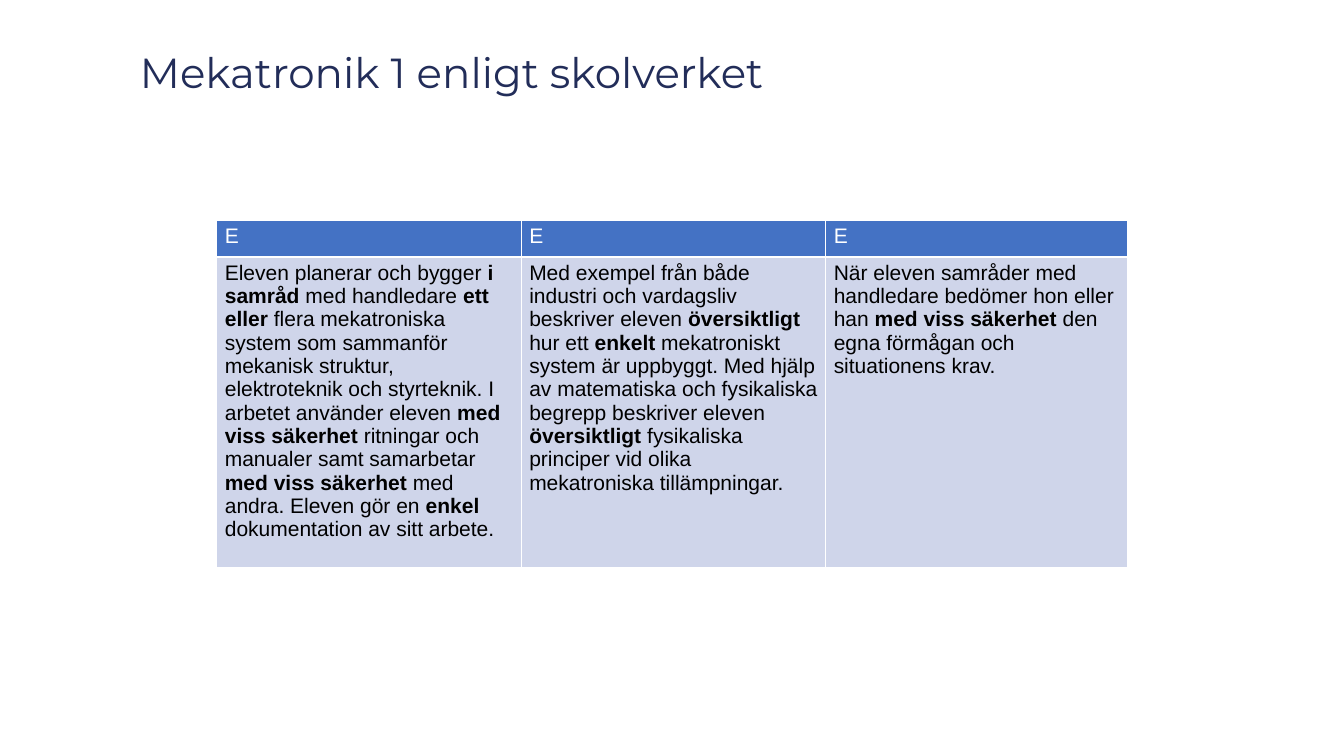
import pptx
import pptx.dml.color
import pptx.enum.text
import pptx.oxml
import pptx.oxml.ns
import pptx.util
from pptx.util import Inches

COLOURS = {
    "title": "222D59",
    "header": "4472C4",
    "body": "CFD5EA",
    "light": "FFFFFF",
    "dark": "000000",
}
COLUMN_WIDTHS = [3.02, 3.02, 2.99]
ROW_HEIGHTS = [0.36, 3.08]

# Each criterion alternates between plain and bold text, starting plain
CRITERIA = [
    ("E", [
        "Eleven planerar och bygger ", "i samråd", " med handledare ", "ett eller",
        " flera mekatroniska system som sammanför mekanisk struktur, elektroteknik "
        "och styrteknik. I arbetet använder eleven ", "med viss säkerhet",
        " ritningar och manualer samt samarbetar ", "med viss säkerhet ",
        "med andra. Eleven gör en ", "enkel ", "dokumentation av sitt arbete.",
    ]),
    ("E", [
        "Med exempel från både industri och vardagsliv beskriver eleven ",
        "översiktligt", " hur ett ", "enkelt ",
        "mekatroniskt system är uppbyggt. Med hjälp av matematiska och fysikaliska "
        "begrepp beskriver eleven ", "översiktligt ",
        "fysikaliska principer vid olika mekatroniska tillämpningar.",
    ]),
    ("E", [
        "När eleven samråder med handledare bedömer hon eller han ",
        "med viss säkerhet ", "den egna förmågan och situationens krav.",
    ]),
]


def colour(name):
    return pptx.dml.color.RGBColor.from_string(COLOURS[name])


def style_font(font, typeface, size, colour_name, bold=False):
    font.name = typeface
    font.size = pptx.util.Pt(size)
    font.bold = bold
    font.color.rgb = colour(colour_name)


def add_title(page, text):
    box = page.shapes.add_textbox(Inches(1.29), Inches(0.02), Inches(8.86), Inches(1.45))
    frame = box.text_frame
    frame.word_wrap = True
    frame.vertical_anchor = pptx.enum.text.MSO_ANCHOR.MIDDLE
    frame.text = text
    para = frame.paragraphs[0]
    para.line_spacing = 0.9
    style_font(para.runs[0].font, "Montserrat", 30, "title")


def add_borders(cell):
    properties = cell._tc.get_or_add_tcPr()
    for position, side in enumerate(("lnL", "lnR", "lnT", "lnB")):
        line = pptx.oxml.parse_xml(
            f'<a:{side} {pptx.oxml.ns.nsdecls("a")} w="{pptx.util.Pt(1)}"><a:solidFill>'
            f'<a:srgbClr val="{COLOURS["light"]}"/></a:solidFill></a:{side}>'
        )
        properties.insert(position, line)


def fill_cell(cell, pieces, fill_name, text_name):
    cell.margin_left = cell.margin_right = Inches(0.08)
    cell.margin_top = cell.margin_bottom = Inches(0.04)
    cell.fill.solid()
    cell.fill.fore_color.rgb = colour(fill_name)
    add_borders(cell)
    para = cell.text_frame.paragraphs[0]
    for index, piece in enumerate(pieces):
        span = para.add_run()
        span.text = piece
        style_font(span.font, "Arial", 15, text_name, bold=index % 2 == 1)


def add_criteria_table(page):
    frame = page.shapes.add_table(
        len(ROW_HEIGHTS), len(COLUMN_WIDTHS), Inches(2.15), Inches(2.19),
        Inches(sum(COLUMN_WIDTHS)), Inches(sum(ROW_HEIGHTS)),
    )
    table = frame.table
    for column, width in zip(table.columns, COLUMN_WIDTHS):
        column.width = Inches(width)
    for row, height in zip(table.rows, ROW_HEIGHTS):
        row.height = Inches(height)
    for index, (grade, pieces) in enumerate(CRITERIA):
        fill_cell(table.cell(0, index), [grade], "header", "light")
        fill_cell(table.cell(1, index), pieces, "body", "dark")


def main():
    deck = pptx.Presentation()
    deck.slide_width = Inches(13.33)
    deck.slide_height = Inches(7.5)
    page = deck.slides.add_slide(deck.slide_layouts[6])

    # Heading
    add_title(page, "Mekatronik 1 enligt skolverket")

    # Grading criteria
    add_criteria_table(page)

    deck.save("out.pptx")


if __name__ == "__main__":
    main()
